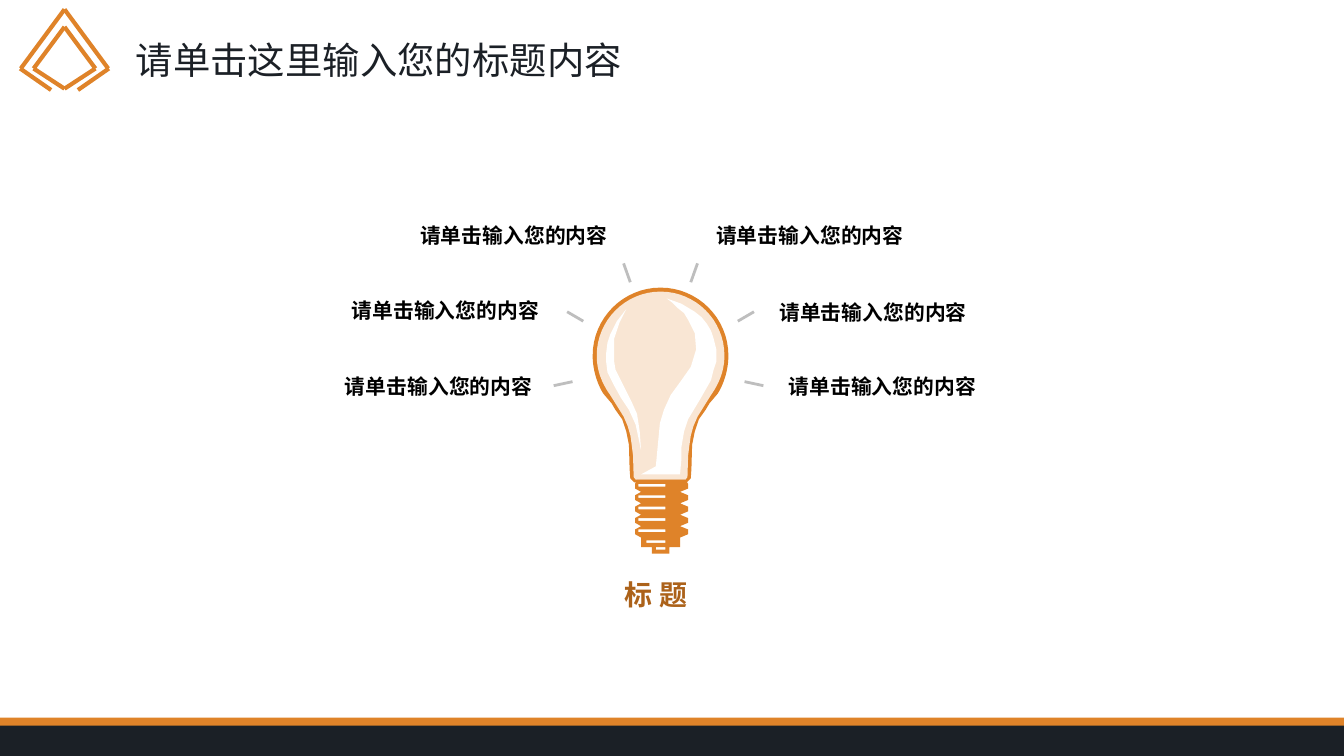
from dataclasses import dataclass
from typing import NamedTuple

from lxml.etree import SubElement
from pptx import Presentation
from pptx.dml.color import RGBColor
from pptx.enum.shapes import MSO_CONNECTOR as Connector, MSO_SHAPE as Preset
from pptx.enum.text import MSO_ANCHOR as Anchor, MSO_AUTO_SIZE as AutoSize, PP_ALIGN as Align
from pptx.oxml.ns import qn
from pptx.util import Inches, Pt

# Grid: square cells of a tenth of an inch
COLUMNS, ROWS = 100, 56.25
BULB_AXIS = 49.15
Point = tuple[float, float]


@dataclass(frozen=True)
class Theme:
    font: str = "Arial"
    orange: str = "DF8329"
    dark: str = "1B2026"
    cream: str = "F9E6D4"
    white: str = "FFFFFF"
    ray: str = "BEBEBE"
    label: str = "000000"
    caption: str = "AC621A"
    title_size: float = 20
    label_size: float = 11.1
    caption_size: float = 15
    mark_line: float = 2.25
    ray_line: float = 1.5


class Box(NamedTuple):
    left: float
    top: float
    width: float
    height: float


class Stroke(NamedTuple):
    axis: float
    start: Point
    end: Point


class Label(NamedTuple):
    box: Box
    align: Align


THEME = Theme()

# Left half of each symmetrical drawing
MARK = [Stroke(4.8, *ends) for ends in (
    ((4.8, 2), (2.5, 5.1)),
    ((4.8, 6.6), (2.5, 5.1)),
    ((4.8, 0.7), (1.55, 5.1)),
    ((3.8, 6.7), (1.5, 5.1)),
)]
RAYS = [
    Stroke(BULB_AXIS, (46.4, 19.6), (46.9, 21)),
    Stroke(BULB_AXIS, (42.2, 23.2), (43.4, 23.9)),
    Stroke(49, (41.2, 28.7), (42.6, 28.4)),
]

LABEL_TEXT = "请单击输入您的内容"
LABELS = [
    Label(Box(25.5, 16.1, 20.7, 3), Align.RIGHT),
    Label(Box(23.5, 21.7, 17.6, 3), Align.RIGHT),
    Label(Box(22.2, 27.3, 18.4, 3), Align.RIGHT),
    Label(Box(52.3, 16.1, 20.7, 3), Align.LEFT),
    Label(Box(57, 21.8, 20.4, 3), Align.LEFT),
    Label(Box(57.7, 27.3, 18.4, 3), Align.LEFT),
]

# Right side of the glass below the round top
OUTER_NECK = [(52.8, 30), (52.5, 30.5), (52, 31.2), (51.7, 32.1), (51.5, 33.1),
              (51.45, 34.9), (51.4, 35.6), (51.1, 35.9)]
INNER_NECK = [(52.9, 29.4), (51.9, 31), (51.6, 31.7), (51.4, 32.4), (51.3, 33.1),
              (51.2, 33.9), (51.15, 35.5), (51, 35.7)]
HIGHLIGHTS = [
    [(46.6, 23), (46.1, 24), (45.7, 25.2), (45.7, 26.9), (45.8, 27.5), (46.2, 28.3),
     (47, 29.9), (47.4, 30.8), (47.6, 32.1), (47.7, 33.5), (47.3, 31.6), (46.8, 30.5),
     (46.2, 29.6), (45.7, 28.7), (45.2, 27.7), (45.1, 26.9), (45.1, 26.3),
     (45.2, 25.5), (45.4, 24.9), (45.9, 23.9)],
    [(49.6, 22.2), (50.7, 22.6), (51.7, 23.2), (52.2, 23.6), (52.6, 24.1), (52.9, 24.6),
     (53.1, 25.2), (53.3, 26), (53.3, 26.9), (53.1, 27.5), (52.9, 28.3), (52.1, 29.7),
     (51.2, 31.2), (50.9, 32.1), (50.7, 33.3), (50.7, 34.2), (50.6, 35.3), (47.7, 35.3),
     (48.8, 34.7), (49.1, 31.5), (49.4, 30.5), (49.9, 29.4), (50.7, 28.3), (51.4, 27.3),
     (51.8, 26), (51.7, 24.8), (51.2, 23.8), (50.9, 23.3), (50.4, 22.9), (50, 22.5)],
]


def cells(count: float) -> int:
    return Inches(count / 10)


def mirror(point: Point, axis: float) -> Point:
    return 2 * axis - point[0], point[1]


def curve(a: Point, b: Point, c: Point, d: Point, steps: int = 16) -> list[Point]:
    """Points along a cubic curve."""
    points = []
    for step in range(steps + 1):
        t = step / steps
        weights = (1 - t) ** 3, 3 * t * (1 - t) ** 2, 3 * t * t * (1 - t), t ** 3
        points.append(tuple(sum(w * p[i] for w, p in zip(weights, (a, b, c, d)))
                            for i in (0, 1)))
    return points


def glass(top: float, radius: float, chin: Point, neck: list[Point]) -> list[Point]:
    side = BULB_AXIS + radius
    middle = top + radius
    right = curve((BULB_AXIS, top), (BULB_AXIS + radius * 0.55, top),
                  (side, middle - radius * 0.55), (side, middle))
    right += curve((side, middle), (side, middle + 1), (chin[0] + 0.5, chin[1] - 0.8), chin)
    right += neck
    return right + [mirror(point, BULB_AXIS) for point in reversed(right)]


def rectangle(left: float, top: float, right: float, bottom: float) -> list[Point]:
    return [(left, top), (right, top), (right, bottom), (left, bottom)]


def screw_base() -> list[list[Point]]:
    """Threaded outline followed by its open slots."""
    rings = [36 + 0.85 * ring for ring in range(5)]
    left = [point for y in rings
            for point in ((47.25, y), (47.25, y + 0.35), (47.7, y + 0.6))]
    right = [point for y in rings
             for point in ((51.2, y), (51.2, y + 0.35), (50.6, y + 0.6))]
    foot = [(47.7, 40.7), (48.5, 40.7), (48.5, 41.2), (49.8, 41.2), (49.8, 40.7), (50.6, 40.7)]
    outline = [(51, 35.7), (47.4, 35.7)] + left + foot + right[::-1]
    slots = [(47.5, y) for y in rings] + [(48.1, 40.2), (48.8, 40.7)]
    return [outline] + [rectangle(x, y, 49.5, y + 0.2) for x, y in slots]


def paint(shape, color: str) -> None:
    shape.shadow.inherit = False
    shape.fill.solid()
    shape.fill.fore_color.rgb = RGBColor.from_string(color)
    shape.line.fill.background()


def add_band(slide, box: Box, color: str) -> None:
    paint(slide.shapes.add_shape(Preset.RECTANGLE, *map(cells, box)), color)


def add_outline(slide, contours: list[list[Point]], color: str) -> None:
    contours = [[(cells(x), cells(y)) for x, y in contour] for contour in contours]
    builder = slide.shapes.build_freeform(*contours[0][0])
    for index, contour in enumerate(contours):
        if index:
            builder.move_to(*contour[0])
        builder.add_line_segments(contour[1:], close=True)
    paint(builder.convert_to_shape(), color)


def add_stroke_pair(slide, stroke: Stroke, color: str, width: float) -> None:
    ends = stroke.start, stroke.end
    for start, end in (ends, [mirror(point, stroke.axis) for point in ends]):
        line = slide.shapes.add_connector(Connector.STRAIGHT, *map(cells, (*start, *end)))
        line.line.color.rgb = RGBColor.from_string(color)
        line.line.width = Pt(width)
        SubElement(line._element.spPr, qn("a:effectLst"))


def write(shape, text: str, size: float, color: str, align: Align,
          bold: bool = False, spacing: float = 1.0, anchor: Anchor = Anchor.TOP) -> None:
    frame = shape.text_frame
    frame.text = text
    paragraph = frame.paragraphs[0]
    formats = {
        frame: {"word_wrap": True, "auto_size": AutoSize.NONE, "vertical_anchor": anchor},
        paragraph: {"alignment": align, "line_spacing": spacing},
        paragraph.runs[0].font: {"name": THEME.font, "size": Pt(size), "bold": bold},
    }
    for target, values in formats.items():
        for name, value in values.items():
            setattr(target, name, value)
    paragraph.runs[0].font.color.rgb = RGBColor.from_string(color)


def main() -> None:
    presentation = Presentation()
    presentation.slide_width, presentation.slide_height = cells(COLUMNS), cells(ROWS)
    slide = presentation.slides.add_slide(presentation.slide_layouts[5])

    # Title and corner mark
    title = slide.shapes.title
    title.left, title.top, title.width, title.height = map(cells, Box(9.1, 2.2, 51.3, 4.4))
    write(title, "请单击这里输入您的标题内容", THEME.title_size, THEME.dark, Align.LEFT,
          anchor=Anchor.MIDDLE)
    for stroke in MARK:
        add_stroke_pair(slide, stroke, THEME.orange, THEME.mark_line)

    # Footer bands
    add_band(slide, Box(0, 53.4, COLUMNS, 2.25), THEME.orange)
    add_band(slide, Box(0, 54, COLUMNS, 2.25), THEME.dark)

    # Light bulb
    add_outline(slide, [glass(21.4, 5.05, (53.4, 29.3), OUTER_NECK)], THEME.orange)
    add_outline(slide, [glass(21.7, 4.75, (53.1, 29.1), INNER_NECK)], THEME.cream)
    add_outline(slide, HIGHLIGHTS, THEME.white)
    add_outline(slide, screw_base(), THEME.orange)
    for ray in RAYS:
        add_stroke_pair(slide, ray, THEME.ray, THEME.ray_line)

    # Labels and caption
    for label in LABELS:
        write(slide.shapes.add_textbox(*map(cells, label.box)), LABEL_TEXT,
              THEME.label_size, THEME.label, label.align, bold=True)
    write(slide.shapes.add_textbox(*map(cells, Box(41.3, 42, 15.5, 5.2))), "标 题 ",
          THEME.caption_size, THEME.caption, Align.CENTER, bold=True, spacing=1.2)

    presentation.save("out.pptx")


if __name__ == "__main__":
    main()
